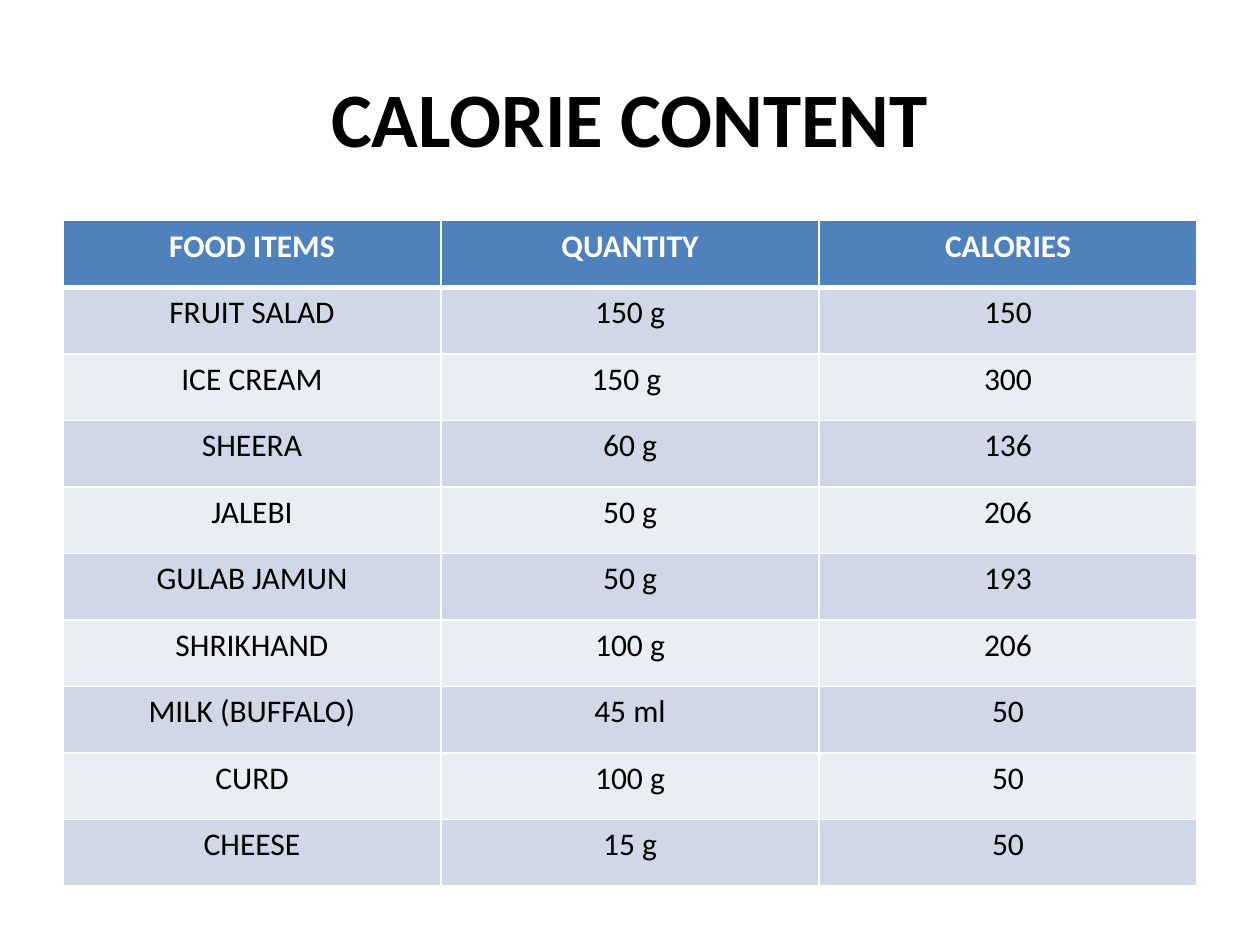
from lxml.etree import SubElement
from pptx import Presentation
from pptx.dml.color import RGBColor
from pptx.enum.text import MSO_ANCHOR, PP_ALIGN
from pptx.oxml.ns import qn
from pptx.util import Cm, Pt

# Content
TITLE = "CALORIE CONTENT"
HEAD = ("FOOD ITEMS", "QUANTITY", "CALORIES")
FOODS = [
    ("FRUIT SALAD", "150 g", "150"),
    ("ICE CREAM", "150 g ", "300"),
    ("SHEERA", "60 g", "136"),
    ("JALEBI", "50 g", "206"),
    ("GULAB JAMUN", "50 g", "193"),
    ("SHRIKHAND", "100 g", "206"),
    ("MILK (BUFFALO)", "45 ml", "50"),
    ("CURD", "100 g", "50"),
    ("CHEESE", "15 g", "50"),
]

# Style
FONT = "Calibri"
BLACK = RGBColor(0x00, 0x00, 0x00)
WHITE = RGBColor(0xFF, 0xFF, 0xFF)
BLUE = RGBColor(0x4F, 0x81, 0xBD)
BANDS = (RGBColor(0xE9, 0xED, 0xF4), RGBColor(0xD0, 0xD8, 0xE8))
LEFT, WIDTH = Cm(1.27), Cm(22.86)


def write(frame, text, size, color, bold):
    par = frame.paragraphs[0]
    par.alignment = PP_ALIGN.CENTER
    run = par.add_run()
    run.text = text
    font = run.font
    font.name, font.size, font.bold = FONT, Pt(size), bold
    font.color.rgb = color


def edge(cell, side, width):
    line = SubElement(cell._tc.get_or_add_tcPr(), qn(f"a:ln{side}"), w=str(Pt(width)))
    fill = SubElement(line, qn("a:solidFill"))
    SubElement(fill, qn("a:srgbClr"), val=str(WHITE))


deck = Presentation()
deck.slide_width, deck.slide_height = Cm(25.4), Cm(19.05)
slide = deck.slides.add_slide(deck.slide_layouts[6])

# Title
box = slide.shapes.add_textbox(LEFT, Cm(0.76), WIDTH, Cm(3.18))
frame = box.text_frame
frame.word_wrap = True
frame.vertical_anchor = MSO_ANCHOR.MIDDLE
write(frame, TITLE, 44, BLACK, True)

# Table: header row, then banded food rows
rows = [HEAD, *FOODS]
table = slide.shapes.add_table(
    len(rows), len(HEAD), LEFT, Cm(4.45), WIDTH, Cm(13.41)
).table
for r, row in enumerate(rows):
    head = r == 0
    for c, text in enumerate(row):
        cell = table.cell(r, c)
        write(cell.text_frame, text, 18, WHITE if head else BLACK, head)
        # Thick rule between the header and the first food
        widths = {"L": 1, "R": 1, "T": 3 if r == 1 else 1, "B": 3 if head else 1}
        for side, width in widths.items():
            edge(cell, side, width)
        cell.fill.solid()
        cell.fill.fore_color.rgb = BLUE if head else BANDS[r % 2]

deck.save("out.pptx")
